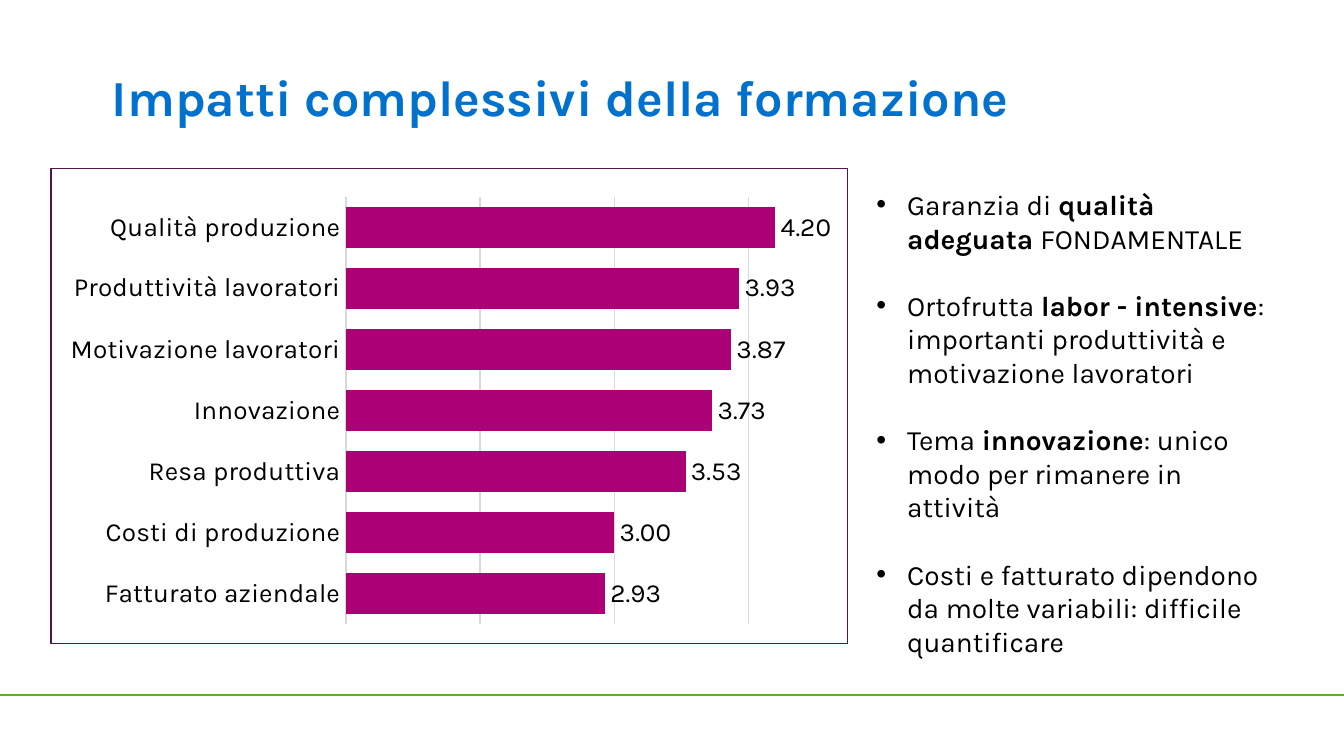
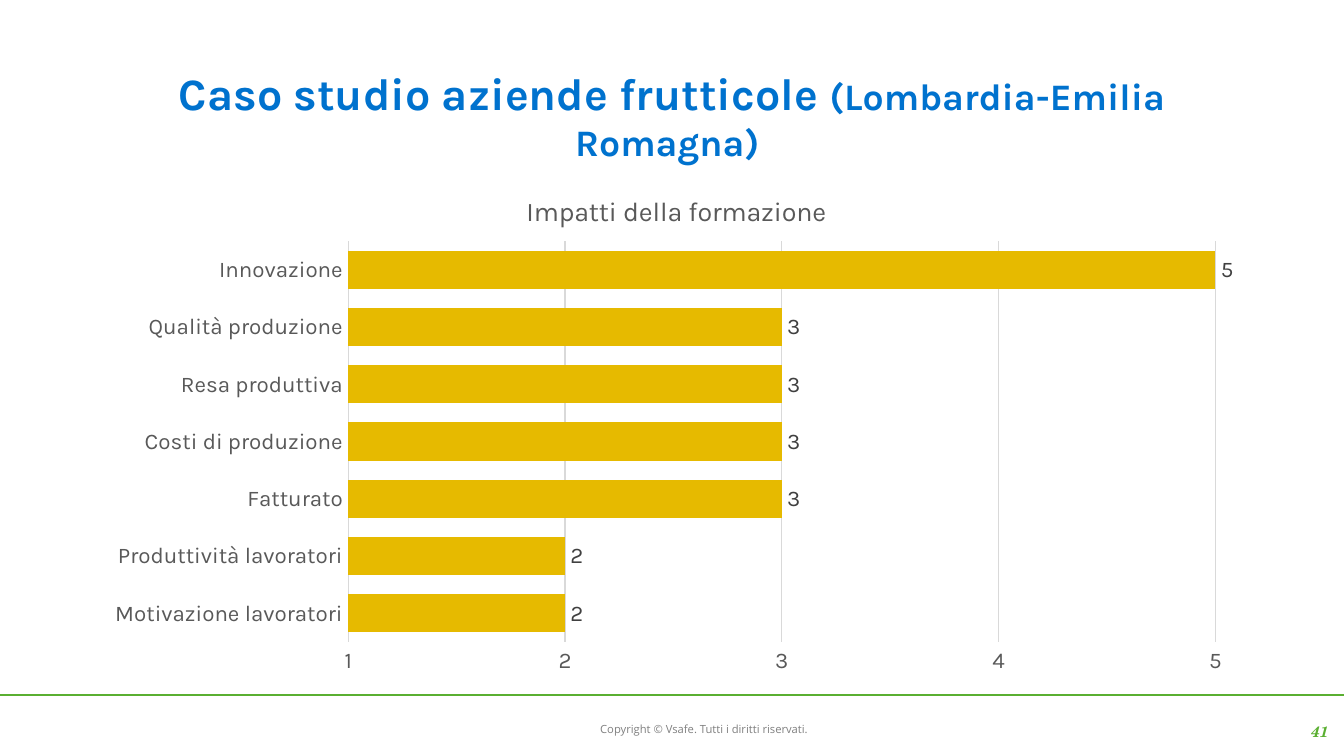
from lxml import etree
from pptx import Presentation
from pptx.chart.data import CategoryChartData
from pptx.dml.color import RGBColor
from pptx.enum.chart import XL_CHART_TYPE, XL_LABEL_POSITION, XL_TICK_MARK
from pptx.enum.shapes import MSO_SHAPE
from pptx.enum.text import MSO_ANCHOR, MSO_AUTO_SIZE, PP_ALIGN
from pptx.oxml.ns import qn
from pptx.util import Emu, Pt

BAR_CLUSTERED = XL_CHART_TYPE.BAR_CLUSTERED
OUTSIDE_END = XL_LABEL_POSITION.OUTSIDE_END
NO_TICK = XL_TICK_MARK.NONE
RECTANGLE = MSO_SHAPE.RECTANGLE
TOP, MIDDLE = MSO_ANCHOR.TOP, MSO_ANCHOR.MIDDLE
FIT_SHAPE = MSO_AUTO_SIZE.SHAPE_TO_FIT_TEXT
LEFT, CENTER, RIGHT = PP_ALIGN.LEFT, PP_ALIGN.CENTER, PP_ALIGN.RIGHT

EMU_PER_PX = 9525
SLIDE_W, SLIDE_H = 960, 540
BULLET_INDENT = 22

BLUE = RGBColor(0x00, 0x72, 0xCE)
GREEN = RGBColor(0x5A, 0xAF, 0x31)
MAGENTA = RGBColor(0xAC, 0x00, 0x77)
PLUM = RGBColor(0x50, 0x16, 0x49)
GOLD = RGBColor(0xE6, 0xBA, 0x00)
BLACK = RGBColor(0x00, 0x00, 0x00)
CHARCOAL = RGBColor(0x40, 0x40, 0x40)
AXIS_GREY = RGBColor(0x59, 0x59, 0x59)
FOOTER_GREY = RGBColor(0x80, 0x80, 0x80)
GRID_GREY = RGBColor(0xD9, 0xD9, 0xD9)

FONT = "Karla"

OVERALL_IMPACTS = {
    "Fatturato aziendale": 2.93,
    "Costi di produzione": 3.00,
    "Resa produttiva": 3.53,
    "Innovazione": 3.73,
    "Motivazione lavoratori": 3.87,
    "Produttività lavoratori": 3.93,
    "Qualità produzione": 4.20,
}
CASE_IMPACTS = {
    "Motivazione lavoratori": 2,
    "Produttività lavoratori": 2,
    "Fatturato": 3,
    "Costi di produzione": 3,
    "Resa produttiva": 3,
    "Qualità produzione": 3,
    "Innovazione": 5,
}
# Each remark is a list of (text, bold) parts
REMARKS = [
    [("Garanzia di ", False), ("qualità adeguata ", True), ("FONDAMENTALE", False)],
    [("Ortofrutta ", False), ("labor - intensive", True),
     (": importanti produttività e motivazione lavoratori", False)],
    [("Tema ", False), ("innovazione", True),
     (": unico modo per rimanere in attività", False)],
    [("Costi e fatturato dipendono da molte variabili: difficile quantificare", False)],
]


def px(length):
    return Emu(length * EMU_PER_PX)


def set_font(font, size, color, name=FONT, bold=False, italic=False):
    font.size = Pt(size)
    font.color.rgb = color
    font.name = name
    font.bold = bold
    font.italic = italic


def add_frame(slide, box, inset_x=0, inset_y=0, anchor=TOP):
    frame = slide.shapes.add_textbox(*map(px, box)).text_frame
    frame.word_wrap = True
    frame.vertical_anchor = anchor
    frame.margin_left = frame.margin_right = px(inset_x)
    frame.margin_top = frame.margin_bottom = px(inset_y)
    return frame


def add_run(paragraph, text, size, color, bold=False):
    run = paragraph.add_run()
    run.text = text
    set_font(run.font, size, color, bold=bold)


# Parts shared by the slides
def add_base_slide(prs):
    slide = prs.slides.add_slide(prs.slide_layouts[6])
    band = slide.shapes.add_shape(RECTANGLE, *map(px, (0, 496, SLIDE_W, 1)))
    band.shadow.inherit = False
    band.fill.solid()
    band.fill.fore_color.rgb = GREEN
    band.line.color.rgb = GREEN
    band.line.width = Pt(0)
    return slide


def add_title(slide, box, parts, align=LEFT, anchor=TOP):
    title = add_frame(slide, box, 7, 4, anchor).paragraphs[0]
    title.alignment = align
    for text, size in parts:
        add_run(title, text, size, BLUE, bold=True)


def add_footer_text(slide, box, text, size, color, name, emphasis=False):
    paragraph = add_frame(slide, box).paragraphs[0]
    paragraph.text = text
    paragraph.alignment = RIGHT
    set_font(paragraph.runs[0].font, size, color, name, emphasis, emphasis)


def add_bullets(slide, box, items):
    frame = add_frame(slide, box, 10, 5)
    frame.auto_size = FIT_SHAPE
    for index, parts in enumerate(items):
        paragraph = frame.add_paragraph() if index else frame.paragraphs[0]
        properties = paragraph._p.get_or_add_pPr()
        properties.set("marL", str(px(BULLET_INDENT)))
        properties.set("indent", str(-px(BULLET_INDENT)))
        bullet_font = etree.SubElement(properties, qn("a:buFont"))
        bullet_font.set("typeface", "Arial")
        etree.SubElement(properties, qn("a:buChar")).set("char", "•")
        if index:
            paragraph.space_before = Pt(18)
        for text, bold in parts:
            add_run(paragraph, text, 15, BLACK, bold)


# Chart parts
def set_layout(parent, position, **values):
    for old in parent.findall(qn("c:layout")):
        parent.remove(old)
    layout = etree.Element(qn("c:layout"))
    parent.insert(position, layout)
    manual = etree.SubElement(layout, qn("c:manualLayout"))
    if "w" in values:
        etree.SubElement(manual, qn("c:layoutTarget")).set("val", "inner")
    for key in ("x", "y"):
        etree.SubElement(manual, qn(f"c:{key}Mode")).set("val", "edge")
    for key, value in values.items():
        etree.SubElement(manual, qn(f"c:{key}")).set("val", str(value))


def set_chart_border(chart, color):
    properties = etree.Element(qn("c:spPr"))
    etree.SubElement(properties, qn("a:noFill"))
    line = etree.SubElement(properties, qn("a:ln"), w=str(Pt(0.75)))
    fill = etree.SubElement(line, qn("a:solidFill"))
    etree.SubElement(fill, qn("a:srgbClr")).set("val", str(color))
    chart._chartSpace.find(qn("c:chart")).addnext(properties)


def add_chart_title(chart, text, x, y):
    chart.has_title = True
    frame = chart.chart_title.text_frame
    frame.text = text
    set_font(frame.paragraphs[0].runs[0].font, 14.4, AXIS_GREY)
    set_layout(chart.chart_title._element, 1, x=x, y=y)


def add_impact_chart(slide, box, impacts, maximum, bar_color, size,
                     axis_color, label_color, number_format, plot_area):
    data = CategoryChartData()
    data.categories = list(impacts)
    data.add_series("Series 1", list(impacts.values()))
    chart = slide.shapes.add_chart(BAR_CLUSTERED, *map(px, box), data).chart
    chart.has_title = False
    chart.has_legend = False
    set_font(chart.font, size, BLACK)

    categories = chart.category_axis
    categories.major_tick_mark = NO_TICK
    categories.format.line.color.rgb = GRID_GREY
    categories.format.line.width = Pt(0.75)
    set_font(categories.tick_labels.font, size, axis_color)

    scores = chart.value_axis
    scores.minimum_scale, scores.maximum_scale = 1, maximum
    scores.major_unit = 1
    scores.major_tick_mark = NO_TICK
    scores.format.line.fill.background()
    scores.major_gridlines.format.line.color.rgb = GRID_GREY
    scores.major_gridlines.format.line.width = Pt(0.75)
    set_font(scores.tick_labels.font, size, axis_color)

    plot = chart.plots[0]
    plot.gap_width, plot.overlap = 50, 4
    plot.vary_by_categories = False
    bars = plot.series[0]
    bars.format.fill.solid()
    bars.format.fill.fore_color.rgb = bar_color
    labels = bars.data_labels
    labels.show_value = True
    labels.position = OUTSIDE_END
    labels.number_format = number_format
    labels.number_format_is_linked = False
    set_font(labels.font, size, label_color)

    x, y, w, h = plot_area
    set_layout(chart._chartSpace.find(".//" + qn("c:plotArea")), 0, x=x, y=y, w=w, h=h)
    return chart


def build_overall_slide(prs):
    slide = add_base_slide(prs)
    chart = add_impact_chart(slide, (36, 120, 570, 340), OVERALL_IMPACTS, 4.5,
                             MAGENTA, 14, BLACK, BLACK, "0.00",
                             (0.37, 0.06, 0.59, 0.9))
    chart.value_axis.visible = False
    set_chart_border(chart, PLUM)
    add_bullets(slide, (616, 129, 307, 324), REMARKS)
    add_title(slide, (73, 41, 828, 56),
              [("Impatti complessivi della formazione", 27)], anchor=MIDDLE)


def build_case_slide(prs):
    slide = add_base_slide(prs)
    add_title(slide, (67, 43, 826, 49),
              [("Caso studio aziende frutticole ", 24),
               ("(Lombardia-Emilia Romagna) ", 20)], CENTER)
    add_footer_text(slide, (403, 516, 176, 12),
                    "Copyright © Vsafe. Tutti i diritti riservati. ",
                    6, FOOTER_GREY, "Open Sans")
    add_footer_text(slide, (923, 516, 26, 15), "41", 8, GREEN,
                    "TeX Gyre Schola", emphasis=True)
    chart = add_impact_chart(slide, (67, 121, 826, 367), CASE_IMPACTS, 5,
                             GOLD, 12, AXIS_GREY, CHARCOAL, "General",
                             (0.22, 0.14, 0.75, 0.78))
    add_chart_title(chart, "Impatti della formazione", 0.37, 0.04)


def main():
    prs = Presentation()
    prs.slide_width, prs.slide_height = px(SLIDE_W), px(SLIDE_H)
    build_overall_slide(prs)
    build_case_slide(prs)
    prs.save("out.pptx")


if __name__ == "__main__":
    main()
